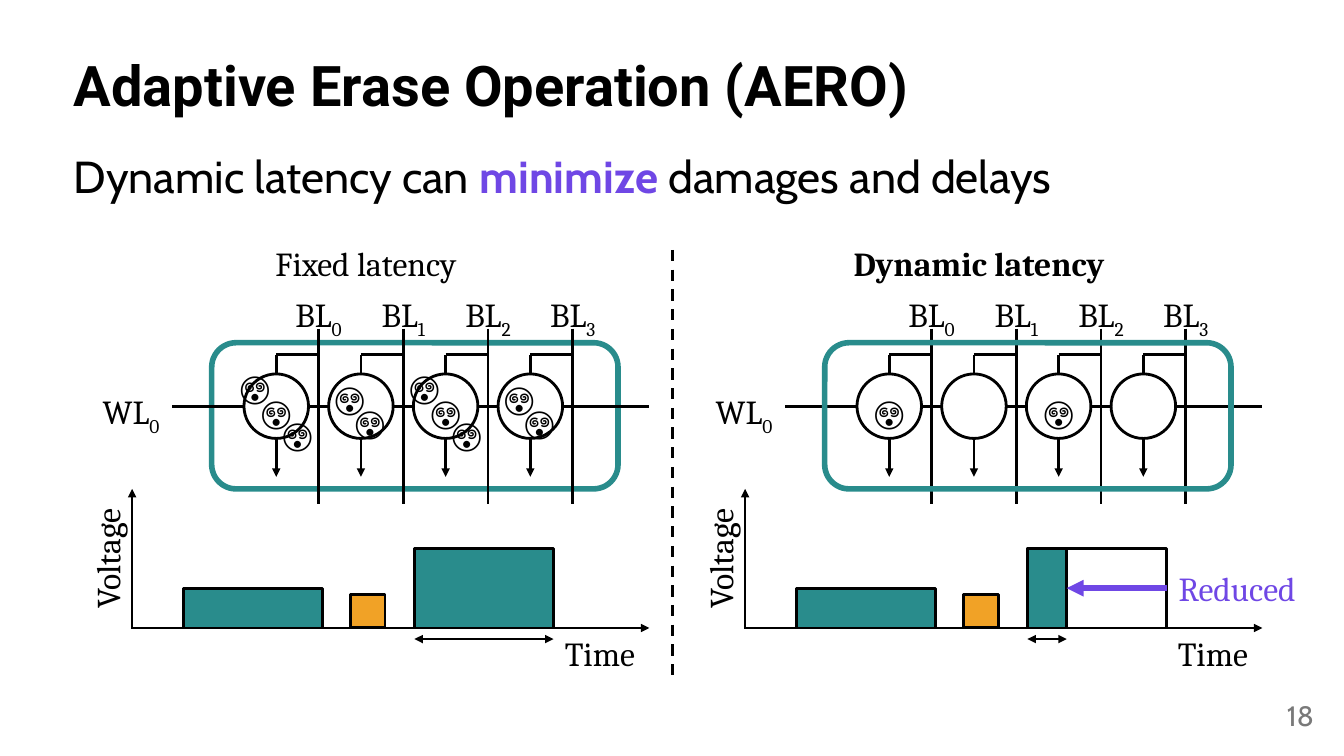
from lxml import etree
from pptx import Presentation
from pptx.dml.color import RGBColor
from pptx.enum.dml import MSO_LINE
from pptx.enum.shapes import MSO_CONNECTOR, MSO_SHAPE
from pptx.enum.text import MSO_ANCHOR, PP_ALIGN
from pptx.oxml.ns import qn
from pptx.util import Inches, Pt

BLACK = RGBColor(0x00, 0x00, 0x00)
WHITE = RGBColor(0xFF, 0xFF, 0xFF)
GRAY = RGBColor(0x79, 0x79, 0x79)
TEAL = RGBColor(0x29, 0x8C, 0x8C)
ORANGE = RGBColor(0xF1, 0xA2, 0x26)
PURPLE = RGBColor(0x6F, 0x47, 0xE5)

LEFT, CENTER, RIGHT = PP_ALIGN.LEFT, PP_ALIGN.CENTER, PP_ALIGN.RIGHT
TOP, MIDDLE = MSO_ANCHOR.TOP, MSO_ANCHOR.MIDDLE
RECT, ROUNDED, OVAL = MSO_SHAPE.RECTANGLE, MSO_SHAPE.ROUNDED_RECTANGLE, MSO_SHAPE.OVAL
STRAIGHT = MSO_CONNECTOR.STRAIGHT
DASH = MSO_LINE.DASH
RIGHT_SIDE = 3

PANEL_SHIFT = 6.08   # from the fixed panel to the dynamic one
FIRST_CELL = 2.74    # centre of the first memory cell
CELL_PITCH = 0.84
CELL_SIZE = 0.64
CELL_Y = 4.03
BITLINE_GAP = 0.42   # from a cell centre to its bitline

# Offsets of damaged-cell faces from the centre of a cell
ONE_FACE = [(0, 0)]
TWO_FACES = [(0.09, 0.1), (-0.11, -0.14)]
THREE_FACES = [(0, 0), (0.21, 0.22), (-0.21, -0.25)]


def write(frame, *runs, size=24, font="Cambria", color=BLACK, bold=False,
          align=CENTER, anchor=MIDDLE, wrap=False, spacing=None):
    """Fill a text frame; a run is a string or a (string, overrides) pair."""
    frame.word_wrap = wrap
    frame.vertical_anchor = anchor
    paragraph = frame.paragraphs[0]
    paragraph.alignment = align
    if spacing:
        paragraph.line_spacing = spacing
    for item in runs:
        words, changes = (item, {}) if isinstance(item, str) else item
        run = paragraph.add_run()
        run.text = words
        run.font.size = Pt(size)
        run.font.name = font
        run.font.bold = changes.get("bold", bold)
        run.font.color.rgb = changes.get("color", color)
        if "baseline" in changes:
            run.font._element.set("baseline", changes["baseline"])


def add_label(slide, x, y, width, height, *runs, rotation=0, **text_format):
    label = slide.shapes.add_textbox(Inches(x), Inches(y), Inches(width), Inches(height))
    label.rotation = rotation
    write(label.text_frame, *runs, **text_format)


def add_block(slide, kind, x, y, width, height, fill=None, line=BLACK, weight=2):
    block = slide.shapes.add_shape(kind, Inches(x), Inches(y), Inches(width), Inches(height))
    block.shadow.inherit = False
    if fill is None:
        block.fill.background()
    else:
        block.fill.solid()
        block.fill.fore_color.rgb = fill
    block.line.color.rgb = line
    block.line.width = Pt(weight)
    return block


def add_wire(slide, x1, y1, x2, y2, color=BLACK, weight=2, arrows=(), dash=None):
    """Draw a straight line; arrows names the ends, headEnd before tailEnd."""
    wire = slide.shapes.add_connector(STRAIGHT, Inches(x1), Inches(y1), Inches(x2), Inches(y2))
    wire.line.color.rgb = color
    wire.line.width = Pt(weight)
    if dash:
        wire.line.dash_style = dash
    line_xml = wire.line._get_or_add_ln()
    for end in arrows:
        etree.SubElement(line_xml, qn("a:" + end), type="triangle")
    etree.SubElement(wire._element.spPr, qn("a:effectLst"))
    return wire


def subscript(digit):
    return str(digit), {"baseline": "-25000"}


def add_block_outline(slide, shift):
    add_block(slide, ROUNDED, 2.1 + shift, 3.4, 4.03, 1.45, line=TEAL, weight=4)


def add_cells(slide, shift, faces):
    """Wordline, bitlines and one memory cell per entry in faces."""
    add_wire(slide, 1.71 + shift, CELL_Y, 6.44 + shift, CELL_Y)
    add_label(slide, 0.86 + shift, 3.83, 0.82, 0.5, "WL", subscript(0),
              align=RIGHT, anchor=TOP)
    radius = CELL_SIZE / 2
    for index, face_offsets in enumerate(faces):
        cell_x = FIRST_CELL + shift + index * CELL_PITCH
        bitline_x = cell_x + BITLINE_GAP
        add_label(slide, bitline_x - 0.36, 2.87, 0.72, 0.5, "BL", subscript(index), anchor=TOP)
        add_wire(slide, bitline_x, 3.26, bitline_x, 5)
        add_wire(slide, cell_x, 3.52, bitline_x, 3.52)
        add_wire(slide, cell_x, 3.52, cell_x, 4.73, arrows=["tailEnd"])
        add_block(slide, OVAL, cell_x - radius, CELL_Y - radius, CELL_SIZE, CELL_SIZE, fill=WHITE)
        for dx, dy in face_offsets:
            add_label(slide, cell_x - 0.27 + dx, 3.84 + dy, 0.54, 0.5, "😵")


def add_voltage_plot(slide, shift, last_width):
    """Axes and erase pulses; returns the last pulse."""
    add_wire(slide, 1.31 + shift, 6.24, 1.31 + shift, 4.85, arrows=["tailEnd"])
    add_block(slide, RECT, 1.82 + shift, 5.84, 1.38, 0.39, fill=TEAL)
    add_block(slide, RECT, 3.48 + shift, 5.9, 0.34, 0.33, fill=ORANGE)
    last_pulse = add_block(slide, RECT, 4.11 + shift, 5.44, last_width, 0.79, fill=TEAL)
    add_wire(slide, 1.31 + shift, 6.23, 6.44 + shift, 6.23, arrows=["tailEnd"])
    add_wire(slide, 4.11 + shift, 6.34, 4.11 + shift + last_width, 6.34,
             arrows=["headEnd", "tailEnd"])
    add_label(slide, 0.43 + shift, 5.29, 1.26, 0.5, "Voltage", rotation=270)
    add_label(slide, 5.48 + shift, 6.23, 0.94, 0.5, "Time")
    return last_pulse


def main():
    deck = Presentation()
    deck.slide_width, deck.slide_height = Inches(13.33), Inches(7.5)
    slide = deck.slides.add_slide(deck.slide_layouts[5])

    # Title, message and page number
    title = slide.shapes.title
    title.left, title.top = Inches(0.63), Inches(0.15)
    title.width, title.height = Inches(12.08), Inches(1.45)
    write(title.text_frame, "Adaptive Erase Operation (AERO)", size=40, font="Roboto",
          bold=True, align=LEFT, wrap=True, spacing=0.9)
    add_label(slide, 0.63, 1.49, 12.08, 0.7, "Dynamic latency can ",
              ("minimize ", {"color": PURPLE, "bold": True}), "damages and delays",
              size=32, font="Cabin", align=LEFT, anchor=TOP, wrap=True, spacing=0.9)
    add_label(slide, 10.13, 6.9, 3, 0.4, "18", size=20, font="Cabin", color=GRAY,
              align=RIGHT, wrap=True)
    add_wire(slide, 6.67, 2.48, 6.67, 6.73, dash=DASH)

    # Fixed latency
    add_label(slide, 2.58, 2.36, 2.1, 0.5, "Fixed latency")
    add_block_outline(slide, 0)
    add_cells(slide, 0, [THREE_FACES, TWO_FACES, THREE_FACES, TWO_FACES])
    add_voltage_plot(slide, 0, 1.38)

    # Dynamic latency
    add_label(slide, 8.33, 2.36, 2.76, 0.5, "Dynamic latency", bold=True)
    add_cells(slide, PANEL_SHIFT, [ONE_FACE, [], ONE_FACE, []])
    add_block_outline(slide, PANEL_SHIFT)
    short_pulse = add_voltage_plot(slide, PANEL_SHIFT, 0.39)

    # Time saved by the shorter pulse
    full_pulse = add_block(slide, RECT, 10.19, 5.44, 1.38, 0.79)
    saving = add_wire(slide, 11.57, 5.83, 10.58, 5.83, color=PURPLE, weight=4,
                      arrows=["tailEnd"])
    saving.begin_connect(full_pulse, RIGHT_SIDE)
    saving.end_connect(short_pulse, RIGHT_SIDE)
    add_label(slide, 11.55, 5.58, 1.44, 0.5, "Reduced", color=PURPLE)

    deck.save("out.pptx")


if __name__ == "__main__":
    main()
